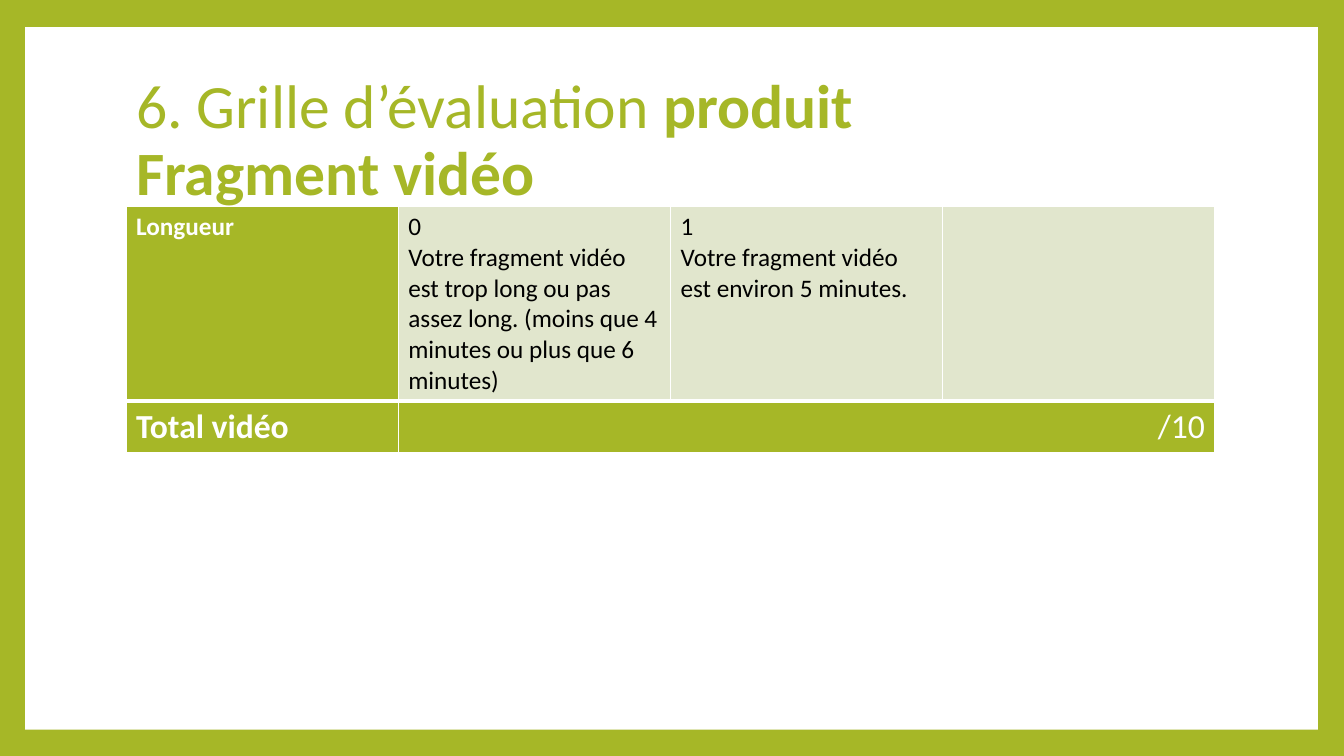
from lxml import etree
from pptx import Presentation
from pptx.dml.color import RGBColor
from pptx.enum.shapes import MSO_SHAPE
from pptx.enum.text import MSO_ANCHOR, MSO_AUTO_SIZE, PP_ALIGN
from pptx.oxml.ns import qn
from pptx.util import Inches, Pt

RECT = MSO_SHAPE.RECTANGLE
MIDDLE = MSO_ANCHOR.MIDDLE
NO_FIT = MSO_AUTO_SIZE.NONE
LEFT, RIGHT = PP_ALIGN.LEFT, PP_ALIGN.RIGHT

GREEN = RGBColor(0xA6, 0xB7, 0x27)
PALE = RGBColor(0xE1, 0xE6, 0xCD)
WHITE = RGBColor(0xFF, 0xFF, 0xFF)
BLACK = RGBColor(0, 0, 0)
FONT = "Calibri"

# Content
TITLE = [[("6. Grille d’évaluation ", False), ("produit", True)],
         [("Fragment vidéo", True)]]
GRID = [
    ["Longueur",
     "0\nVotre fragment vidéo est trop long ou pas assez long. "
     "(moins que 4 minutes ou plus que 6 minutes)",
     "1\nVotre fragment vidéo est environ 5 minutes.",
     ""],
    ["Total vidéo", "/10", "", ""],
]
HEIGHTS = [1.93, 0.49]
SIZES = [18, 24]
BOTTOMS = [3, 1]  # line width under each row, in points
EDGE, WIDTH = 1.25, 10.8


def style(run, size, color, bold):
    font = run.font
    font.name, font.size, font.bold = FONT, Pt(size), bold
    font.color.rgb = color


def border(cell, side, width):
    line = etree.SubElement(cell._tc.get_or_add_tcPr(), qn("a:ln" + side),
                            w=str(Pt(width)))
    fill = etree.SubElement(line, qn("a:solidFill"))
    etree.SubElement(fill, qn("a:srgbClr"), val=str(WHITE))


def add_panel(slide):
    panel = slide.shapes.add_shape(RECT, Inches(0.25), Inches(0.27),
                                   Inches(12.82), Inches(6.97))
    panel.shadow.inherit = False
    panel.fill.solid()
    panel.fill.fore_color.rgb = WHITE
    panel.line.fill.background()
    slide.shapes.title.element.addprevious(panel.element)


def add_title(slide):
    title = slide.shapes.title
    title.left, title.top = Inches(EDGE), Inches(0.67)
    title.width, title.height = Inches(WIDTH), Inches(1.48)
    frame = title.text_frame
    frame.auto_size, frame.vertical_anchor = NO_FIT, MIDDLE
    frame.word_wrap = True
    para = frame.paragraphs[0]
    para.alignment, para.line_spacing = LEFT, 0.9
    for i, line in enumerate(TITLE):
        if i:
            para.add_line_break()
        for text, bold in line:
            run = para.add_run()
            run.text = text
            style(run, 44, GREEN, bold)


def add_grid(slide):
    rows, cols = len(GRID), len(GRID[0])
    table = slide.shapes.add_table(
        rows, cols, Inches(EDGE), Inches(2.05),
        Inches(WIDTH), Inches(sum(HEIGHTS))).table
    table.first_row = table.horz_banding = False
    for col in table.columns:
        col.width = Inches(WIDTH / cols)
    for r, texts in enumerate(GRID):
        table.rows[r].height = Inches(HEIGHTS[r])
        top = BOTTOMS[r - 1] if r else 1
        for c, text in enumerate(texts):
            cell = table.cell(r, c)
            for side, width in zip("LRTB", (1, 1, top, BOTTOMS[r])):
                border(cell, side, width)
            dark = c == 0 or r == rows - 1
            cell.fill.solid()
            cell.fill.fore_color.rgb = GREEN if dark else PALE
            cell.text_frame.text = text
            for para in cell.text_frame.paragraphs:
                for run in para.runs:
                    style(run, SIZES[r], WHITE if dark else BLACK, c == 0)
    # The total spans all score columns
    total = table.cell(rows - 1, 1)
    total.merge(table.cell(rows - 1, cols - 1))
    total.text_frame.paragraphs[0].alignment = RIGHT


def main():
    deck = Presentation()
    deck.slide_width, deck.slide_height = Inches(13.33), Inches(7.5)
    slide = deck.slides.add_slide(deck.slide_layouts[5])
    slide.background.fill.solid()
    slide.background.fill.fore_color.rgb = GREEN
    add_panel(slide)
    add_title(slide)
    add_grid(slide)
    deck.save("out.pptx")


if __name__ == "__main__":
    main()
